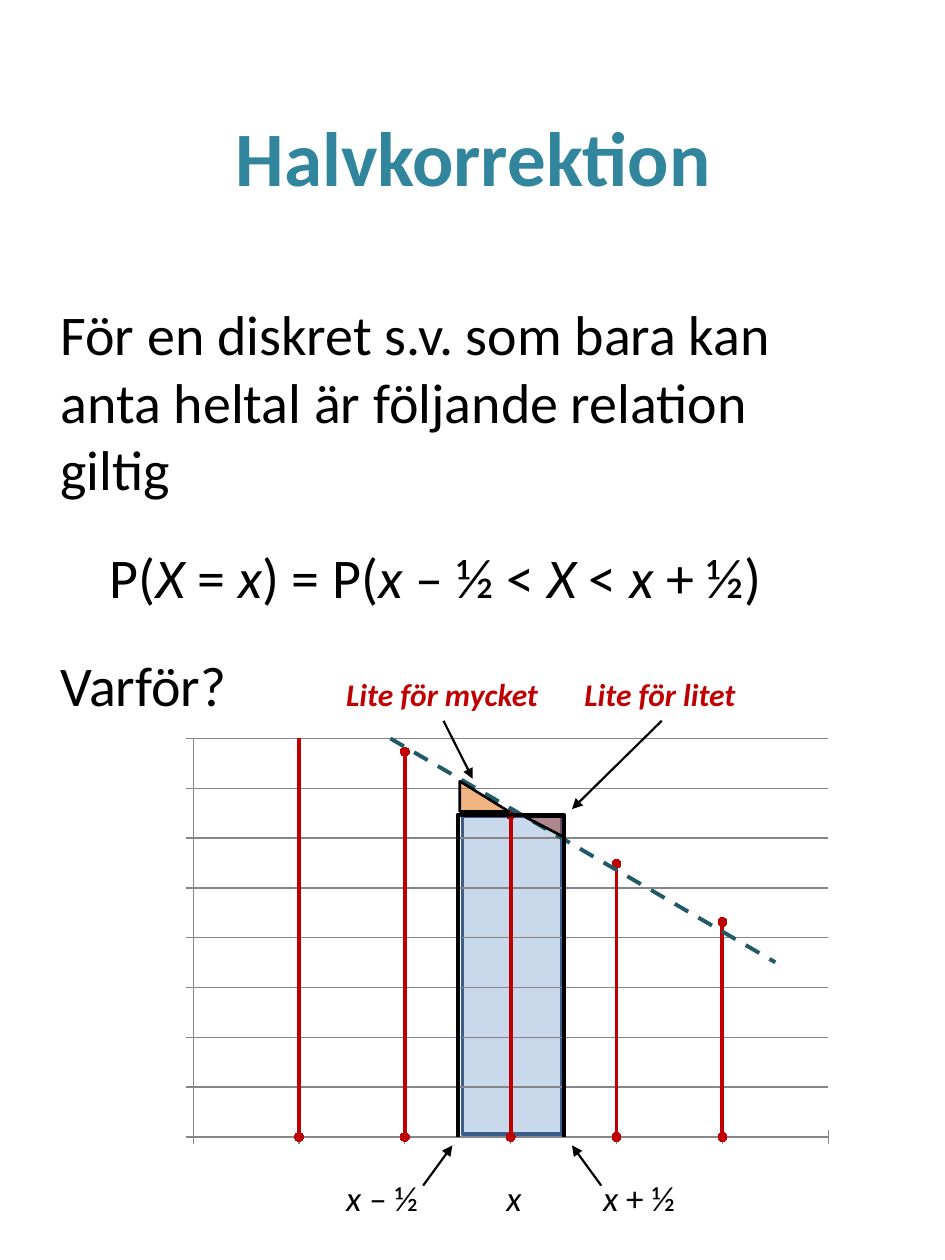
from typing import NamedTuple

from lxml import etree
from pptx import Presentation
from pptx.chart.data import XyChartData
from pptx.dml.color import RGBColor
from pptx.enum.chart import XL_CHART_TYPE, XL_MARKER_STYLE, XL_TICK_LABEL_POSITION, XL_TICK_MARK
from pptx.enum.dml import MSO_LINE
from pptx.enum.shapes import MSO_CONNECTOR, MSO_SHAPE
from pptx.enum.text import MSO_ANCHOR, MSO_AUTO_SIZE, PP_ALIGN
from pptx.oxml.ns import qn
from pptx.util import Cm, Pt

RECTANGLE, TRIANGLE = MSO_SHAPE.RECTANGLE, MSO_SHAPE.RIGHT_TRIANGLE
LEFT, CENTER = PP_ALIGN.LEFT, PP_ALIGN.CENTER
TOP, MIDDLE = MSO_ANCHOR.TOP, MSO_ANCHOR.MIDDLE
DASH, CIRCLE = MSO_LINE.DASH, XL_MARKER_STYLE.CIRCLE

FONT = "Calibri"
COLORS = {
    "title": "31859C", "text": "000000", "red": "C00000", "curve": "215968",
    "bar": "4F81BD", "bar_edge": "3A5F8C", "excess": "E46C0A",
    "deficit": "953735", "grid": "868686",
}


class Box(NamedTuple):
    left: float
    top: float
    width: float
    height: float

    def lengths(self) -> list:
        return [Cm(value) for value in self]


class Paragraph(NamedTuple):
    text: str  # parts between asterisks are italic
    before: float = 0
    indent: float = 0


class Area(NamedTuple):
    kind: int
    box: Box
    fill: str
    opacity: int
    edge: str
    width: float
    rotation: int = 0


class Arrow(NamedTuple):
    start: tuple
    end: tuple


class Curve(NamedTuple):
    points: list
    color: str
    dashed: bool = False
    marked: bool = False


# Probability at each whole number; the bar belongs to x = 13
STEMS = {13: 72, 12: 86, 11: 100, 14: 61, 15: 48}
CURVES = [
    Curve([(12.5, 0), (12.5, 72), (13.5, 72), (13.5, 0)], "text"),
    Curve([(11.5, 94), (15.5, 39)], "curve", dashed=True),
] + [Curve([(x, 0), (x, height)], "red", marked=True) for x, height in STEMS.items()]

BAR = Area(RECTANGLE, Box(9.32, 16.46, 2.01, 6.4), "bar", 30, "bar_edge", 2)
CORNERS = [
    Area(TRIANGLE, Box(9.27, 15.75, 0.99, 0.61), "excess", 50, "text", 1.5),
    Area(TRIANGLE, Box(10.57, 16.46, 0.79, 0.41), "deficit", 50, "text", 1.5, 180),
]
ARROWS = [
    Arrow((8.53, 23.9), (9.12, 23.09)),
    Arrow((12.12, 23.9), (11.53, 23.09)),
    Arrow((8.94, 14.53), (9.53, 15.7)),
    Arrow((13.34, 14.53), (11.53, 16.31)),
]
AXIS_LABELS = [
    ("*x* – ½", Box(6.73, 23.6, 1.98, 1.12)),
    ("*x* + ½", Box(11.91, 23.6, 1.98, 1.12)),
    ("*x*", Box(9.96, 23.6, 0.81, 1.12)),
]
NOTES = [
    ("*Lite för mycket*", Box(6.73, 13.49, 4.42, 1.02)),
    ("*Lite för litet*", Box(11.53, 13.49, 3.61, 1.02)),
]
BODY = [
    Paragraph("För en diskret s.v. som bara kan anta heltal är följande relation giltig", 2),
    Paragraph("P(*X* = *x*) = P(*x* – ½ < *X* < *x* + ½)", 23.4, 0.99),
    Paragraph("Varför?", 23.4),
]


def rgb(name: str) -> RGBColor:
    return RGBColor.from_string(COLORS[name])


def add_text(slide, paragraphs: list, box: Box, *, size: float, color: str = "text",
             bold: bool = False, align=LEFT, anchor=TOP, wrap: bool = True) -> None:
    shape = slide.shapes.add_textbox(*box.lengths())
    frame = shape.text_frame
    frame.word_wrap = wrap
    frame.auto_size = MSO_AUTO_SIZE.NONE if wrap else MSO_AUTO_SIZE.SHAPE_TO_FIT_TEXT
    frame.vertical_anchor = anchor
    for index, item in enumerate(paragraphs):
        paragraph = frame.add_paragraph() if index else frame.paragraphs[0]
        paragraph.alignment = align
        paragraph.space_before = Pt(item.before)
        if item.indent:
            paragraph._p.get_or_add_pPr().set("marL", str(Cm(item.indent)))
        for position, part in enumerate(item.text.split("*")):
            if part:
                run = paragraph.add_run()
                run.text = part
                run.font.name, run.font.size = FONT, Pt(size)
                run.font.bold, run.font.italic = bold, position % 2 == 1
                run.font.color.rgb = rgb(color)


def add_area(slide, area: Area) -> None:
    shape = slide.shapes.add_shape(area.kind, *area.box.lengths())
    shape.shadow.inherit = False
    shape.rotation = area.rotation
    shape.fill.solid()
    shape.fill.fore_color.rgb = rgb(area.fill)
    fill_color = shape._element.spPr.find(qn("a:solidFill"))[0]
    etree.SubElement(fill_color, qn("a:alpha"), val=str(area.opacity * 1000))
    shape.line.color.rgb = rgb(area.edge)
    shape.line.width = Pt(area.width)


def add_arrow(slide, arrow: Arrow) -> None:
    ends = [Cm(value) for value in arrow.start + arrow.end]
    connector = slide.shapes.add_connector(MSO_CONNECTOR.STRAIGHT, *ends)
    connector.line.color.rgb = rgb("text")
    connector.line.width = Pt(1.25)
    etree.SubElement(connector.line._get_or_add_ln(), qn("a:tailEnd"), type="triangle")
    etree.SubElement(connector._element.spPr, qn("a:effectLst"))


def format_axis(axis, low: float, high: float, step: float, grid: bool) -> None:
    axis.minimum_scale, axis.maximum_scale, axis.major_unit = low, high, step
    axis.tick_label_position = XL_TICK_LABEL_POSITION.NONE
    axis.major_tick_mark, axis.minor_tick_mark = XL_TICK_MARK.CROSS, XL_TICK_MARK.NONE
    axis.has_major_gridlines = grid
    lines = [axis.format.line] + ([axis.major_gridlines.format.line] if grid else [])
    for line in lines:
        line.color.rgb = rgb("grid")
        line.width = Pt(0.75)


def set_plot_area(chart, x: float, y: float, w: float, h: float) -> None:
    plot_area = chart._chartSpace.chart.plotArea
    for old in plot_area.findall(qn("c:layout")):
        plot_area.remove(old)
    layout = etree.Element(qn("c:layout"))
    manual = etree.SubElement(layout, qn("c:manualLayout"))
    values = {"layoutTarget": "inner", "xMode": "edge", "yMode": "edge",
              "x": x, "y": y, "w": w, "h": h}
    for tag, value in values.items():
        etree.SubElement(manual, qn(f"c:{tag}"), val=str(value))
    plot_area.insert(0, layout)


def add_stem_chart(slide, box: Box) -> None:
    data = XyChartData()
    for number, curve in enumerate(CURVES, 1):
        series = data.add_series(f"Series {number}")
        for x, y in curve.points:
            series.add_data_point(x, y)
    chart = slide.shapes.add_chart(
        XL_CHART_TYPE.XY_SCATTER_LINES_NO_MARKERS, *box.lengths(), data).chart
    chart.has_legend = chart.has_title = False
    chart.font.name, chart.font.size = FONT, Pt(10)
    chart.font.color.rgb = rgb("text")
    chart.plots[0].vary_by_categories = False
    format_axis(chart.category_axis, 10, 16, 1, grid=False)
    format_axis(chart.value_axis, 0, 89, 89 / 8, grid=True)
    set_plot_area(chart, 0.057, 0.044, 0.943, 0.912)
    for series, curve in zip(chart.plots[0].series, CURVES):
        series.smooth = False
        series.format.line.color.rgb = rgb(curve.color)
        series.format.line.width = Pt(2.25)
        if curve.dashed:
            series.format.line.dash_style = DASH
        if curve.marked:
            marker = series.marker
            marker.style, marker.size = CIRCLE, 5
            marker.format.fill.solid()
            marker.format.fill.fore_color.rgb = rgb(curve.color)
            marker.format.line.color.rgb = rgb(curve.color)


def main() -> None:
    presentation = Presentation()
    presentation.slide_width, presentation.slide_height = Cm(19.05), Cm(25.4)
    slide = presentation.slides.add_slide(presentation.slide_layouts[6])

    # Bar behind the chart, then title and body
    add_area(slide, BAR)
    add_text(slide, [Paragraph("Halvkorrektion")], Box(0.97, 1.02, 17.15, 4.24),
             size=44, color="title", bold=True, align=CENTER, anchor=MIDDLE)
    add_text(slide, BODY, Box(0.97, 5.92, 16.56, 18.97), size=32)

    # Chart with its labels, corner triangles and arrows
    add_stem_chart(slide, Box(3.12, 14.5, 13.59, 8.81))
    for text, box in AXIS_LABELS:
        add_text(slide, [Paragraph(text)], box, size=20, wrap=False)
    for corner in CORNERS:
        add_area(slide, corner)
    for arrow in ARROWS:
        add_arrow(slide, arrow)
    for text, box in NOTES:
        add_text(slide, [Paragraph(text)], box, size=18, color="red", bold=True, wrap=False)

    presentation.save("out.pptx")


if __name__ == "__main__":
    main()
